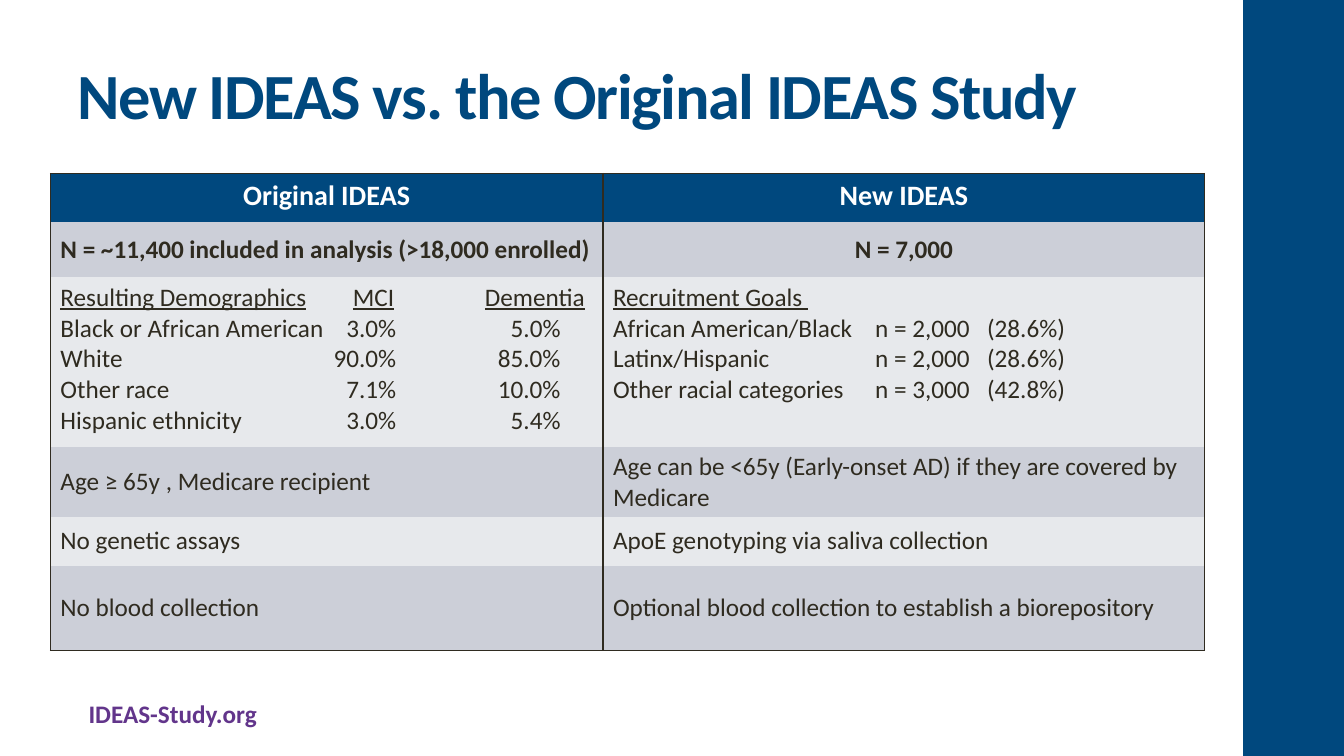
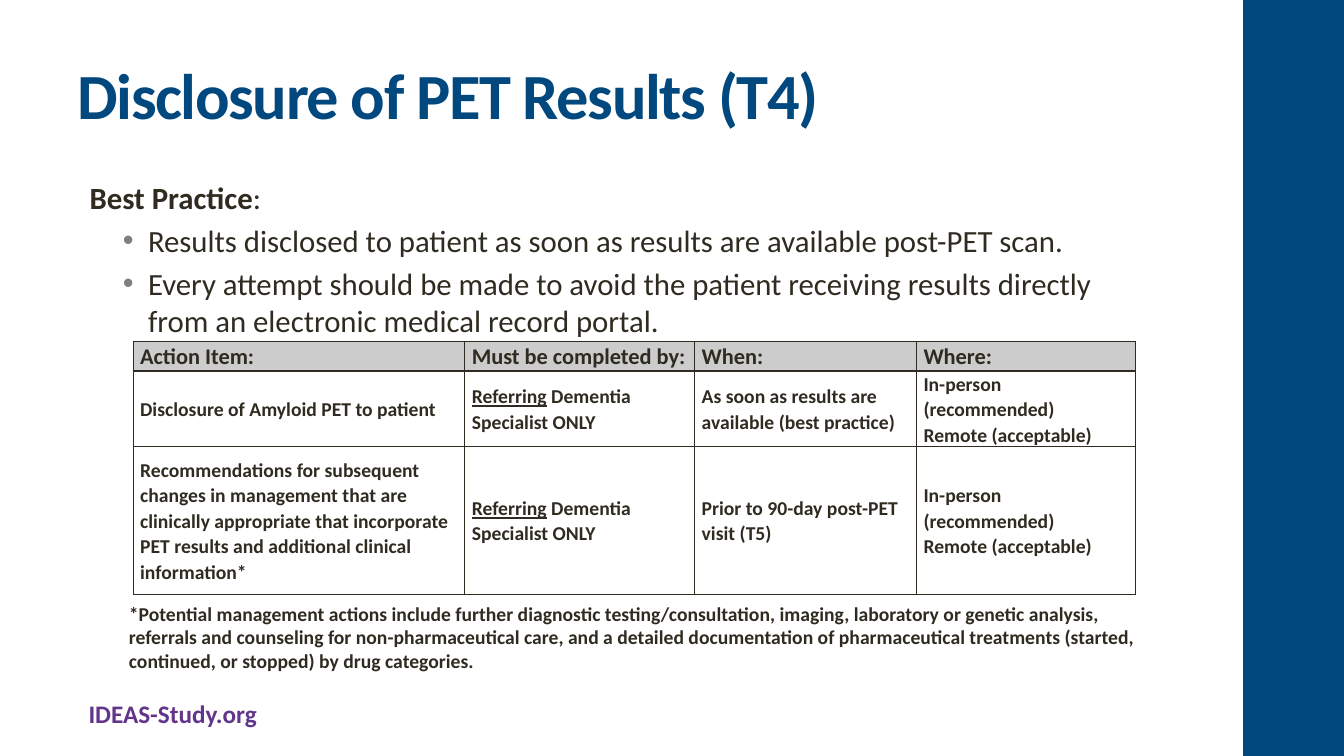
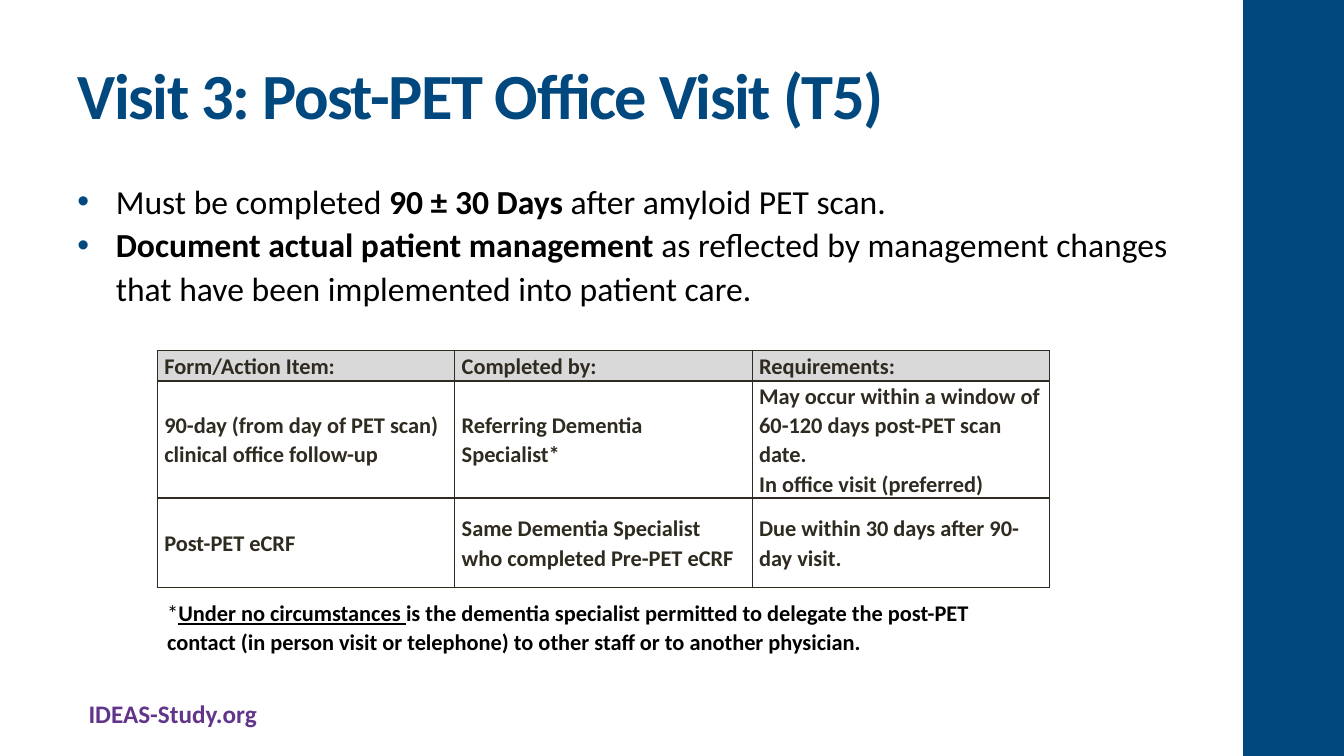
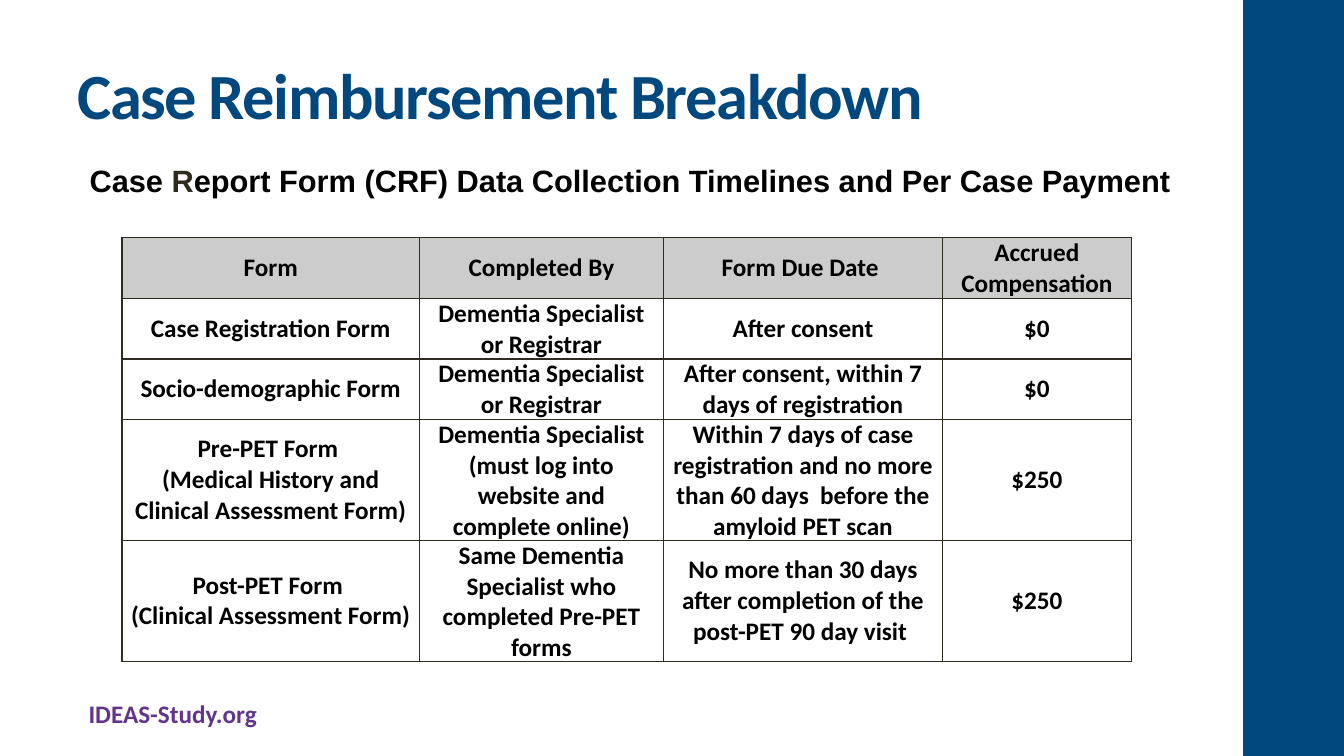
from lxml.etree import SubElement
from pptx import Presentation
from pptx.dml.color import RGBColor
from pptx.enum.shapes import MSO_SHAPE as Shape
from pptx.enum.text import MSO_ANCHOR as Anchor, PP_ALIGN as Align
from pptx.oxml.ns import qn
from pptx.util import Pt

PX = 9144
NAVY = RGBColor(0x00, 0x48, 0x7E)
PURPLE = RGBColor(0x62, 0x35, 0x8B)
DARK = RGBColor(0x2F, 0x2B, 0x20)
BLACK = RGBColor(0, 0, 0)
WHITE = RGBColor(255, 255, 255)
MID_GRAY = RGBColor(0x7F, 0x7F, 0x7F)
HEAD_GRAY = RGBColor(0xCC, 0xCC, 0xCC)
PALE_GRAY = RGBColor(0xD9, 0xD9, 0xD9)
BAND_DARK = RGBColor(0xCC, 0xCF, 0xD8)
BAND_LIGHT = RGBColor(0xE7, 0xE9, 0xEC)

FOOTER = "IDEAS-Study.org"
HEADER_TABS = [(290, "l"), (421, "l")]
RATE_TABS = [(333, "r"), (496, "r")]
GOAL_TABS = [(260, "l"), (371, "l")]
SUB_BULLET = {"margin": 70, "indent": -25, "bullet": MID_GRAY, "before": 4.4}
BULLET = {"margin": 38, "indent": -38, "bullet": NAVY}

REFERRING = [[("Referring", "u"), (" Dementia Specialist ONLY", "")]]
WHERE = ["In-person (recommended)", "Remote (acceptable)"]

STUDY_ROWS = [
    ["Original IDEAS", "New IDEAS"],
    ["N = ~11,400 included in analysis (>18,000 enrolled)",
     [{"runs": "N = 7,000", "align": Align.CENTER}]],
    [[{"runs": [("Resulting Demographics\tMCI\tDementia", "u")], "tabs": HEADER_TABS},
      {"runs": "Black or African American\t3.0%\t5.0%", "tabs": RATE_TABS},
      {"runs": "White\t90.0%\t85.0%", "tabs": RATE_TABS},
      {"runs": "Other race\t7.1%\t10.0%", "tabs": RATE_TABS},
      {"runs": "Hispanic ethnicity\t3.0%\t5.4%", "tabs": RATE_TABS}],
     [[("Recruitment Goals ", "u")],
      {"runs": "African American/Black\tn = 2,000\t(28.6%)", "tabs": GOAL_TABS},
      {"runs": "Latinx/Hispanic\tn = 2,000\t(28.6%)", "tabs": GOAL_TABS},
      {"runs": "Other racial categories\tn = 3,000\t(42.8%)", "tabs": GOAL_TABS}]],
    ["Age ≥ 65y , Medicare recipient",
     "Age can be <65y (Early-onset AD) if they are covered by Medicare"],
    ["No genetic assays", "ApoE genotyping via saliva collection"],
    ["No blood collection", "Optional blood collection to establish a biorepository"],
]
STUDY_FORMATS = [
    {"fill": NAVY, "size": 20, "bold": True, "color": WHITE,
     "align": Align.CENTER, "anchor": Anchor.TOP},
    {"fill": BAND_DARK, "bold": True},
    {"fill": BAND_LIGHT, "anchor": Anchor.TOP},
    {"fill": BAND_DARK},
    {"fill": BAND_LIGHT},
    {"fill": BAND_DARK},
]

DISCLOSURE_BODY = [
    {"runs": [("Best Practice", "b"), (":", "")], "margin": 12},
    {"runs": "Results disclosed to patient as soon as results are available post-PET scan.",
     **SUB_BULLET},
    {"runs": "Every attempt should be made to avoid the patient receiving results directly "
             "from an electronic medical record portal.", **SUB_BULLET},
]
DISCLOSURE_ROWS = [
    ["Action Item:", "Must be completed by:", "When:", "Where:"],
    ["Disclosure of Amyloid PET to patient", REFERRING,
     "As soon as results are available (best practice)", WHERE],
    ["Recommendations for subsequent changes in management that are clinically appropriate "
     "that incorporate PET results and additional clinical information*", REFERRING,
     "Prior to 90-day post-PET visit (T5)", WHERE],
]
DISCLOSURE_NOTE = (
    "*Potential management actions include further diagnostic testing/consultation, imaging, "
    "laboratory or genetic analysis, referrals and counseling for non-pharmaceutical care, and "
    "a detailed documentation of pharmaceutical treatments (started, continued, or stopped) "
    "by drug categories.")

VISIT_BODY = [
    {"runs": [("Must be completed ", ""), ("90 ± 30 Days", "b"),
              (" after amyloid PET scan.", "")], **BULLET},
    {"runs": [("Document actual patient management ", "b"),
              ("as reflected by management changes that have been implemented into "
               "patient care.", "")], **BULLET},
]
VISIT_ROWS = [
    ["Form/Action Item:", "Completed by:", "Requirements:"],
    ["90-day (from day of PET scan) clinical office follow-up",
     "Referring Dementia Specialist*",
     ["May occur within a window of 60-120 days post-PET scan date.",
      "In office visit (preferred)"]],
    ["Post-PET eCRF", "Same Dementia Specialist who completed Pre-PET eCRF",
     "Due within 30 days after 90-day visit."],
]
VISIT_NOTE = [[
    ("*", ""), ("Under no circumstances ", "bu"),
    ("is the dementia specialist permitted to delegate the post-PET contact (in person visit "
     "or telephone) to other staff or to another physician.", "b")]]

PAYMENT_HEADING = [[
    ("Case ", ""), ("R", "d"),
    ("eport Form (CRF) Data Collection Timelines and Per Case Payment", "")]]
PAYMENT_ROWS = [
    ["Form", "Completed By", "Form Due Date ", "Accrued Compensation"],
    ["Case Registration Form", "Dementia Specialist or Registrar", "After consent", "$0"],
    ["Socio-demographic Form", "Dementia Specialist or Registrar",
     "After consent, within 7 days of registration", "$0"],
    [["Pre-PET Form ", "(Medical History and Clinical Assessment Form)"],
     "Dementia Specialist (must log into website and complete online)",
     "Within 7 days of case registration and no more than 60 days  before the amyloid PET scan",
     "$250"],
    [["Post-PET Form ", "(Clinical Assessment Form)"],
     "Same Dementia Specialist who completed Pre-PET forms",
     "No more than 30 days after completion of the post-PET 90 day visit ", "$250"],
]


def px(*lengths):
    return [length * PX for length in lengths]


def add_color(parent, color):
    SubElement(parent, qn("a:srgbClr"), val=str(color))


def write(frame, content, size=18, color=DARK, bold=False, font="Calibri",
          align=Align.LEFT, line=None, spacing=None):
    items = [content] if isinstance(content, str) else content
    for index, item in enumerate(items):
        detail = item if isinstance(item, dict) else {"runs": item}
        paragraph = frame.paragraphs[0] if index == 0 else frame.add_paragraph()
        properties = paragraph._p.get_or_add_pPr()
        if "margin" in detail:
            properties.set("marL", str(detail["margin"] * PX))
            properties.set("indent", str(detail.get("indent", 0) * PX))
        if "bullet" in detail:
            add_color(SubElement(properties, qn("a:buClr")), detail["bullet"])
            SubElement(properties, qn("a:buFont"), typeface="Arial")
            SubElement(properties, qn("a:buChar"), char="•")
        if "tabs" in detail:
            stops = SubElement(properties, qn("a:tabLst"))
            for position, side in detail["tabs"]:
                SubElement(stops, qn("a:tab"), pos=str(position * PX), algn=side)
        paragraph.alignment = detail.get("align", align)
        if line:
            paragraph.line_spacing = line
        if "before" in detail:
            paragraph.space_before = Pt(detail["before"])
        paragraph.font.size = Pt(size)
        paragraph.font.name = font
        paragraph.font.bold = bold
        paragraph.font.color.rgb = color
        runs = detail["runs"]
        for text, flags in [(runs, "")] if isinstance(runs, str) else runs:
            run = paragraph.add_run()
            run.text = text
            if "b" in flags:
                run.font.bold = True
            if "u" in flags:
                run.font.underline = True
            if "d" in flags:
                run.font.color.rgb = DARK
            if spacing:
                run._r.get_or_add_rPr().set("spc", str(spacing))


def add_text(slide, box, content, anchor=Anchor.TOP, **style):
    frame = slide.shapes.add_textbox(*px(*box)).text_frame
    frame.word_wrap = True
    frame.vertical_anchor = anchor
    write(frame, content, **style)


def add_borders(cell, sides):
    properties = cell._tc.get_or_add_tcPr()
    for side in "LRTB":
        border = SubElement(properties, qn("a:ln" + side), w=str(Pt(1)))
        if side in sides:
            add_color(SubElement(border, qn("a:solidFill")), DARK)
        else:
            SubElement(border, qn("a:noFill"))


def add_table(slide, left, top, widths, heights, rows, formats, grid=True, **style):
    box = px(left, top, sum(widths), sum(heights))
    table = slide.shapes.add_table(len(rows), len(widths), *box).table
    table.first_row = table.horz_banding = False
    for column, width in zip(table.columns, widths):
        column.width = width * PX
    last = len(rows) - 1
    for index, (cells, row_format) in enumerate(zip(rows, formats)):
        table.rows[index].height = heights[index] * PX
        row_style = {**style, **row_format}
        fill = row_style.pop("fill", WHITE)
        anchor = row_style.pop("anchor", Anchor.MIDDLE)
        sides = "LR" + "T" * (grid or index == 0) + "B" * (grid or index == last)
        for column, content in enumerate(cells):
            cell = table.cell(index, column)
            add_borders(cell, sides)
            cell.fill.solid()
            cell.fill.fore_color.rgb = fill
            cell.vertical_anchor = anchor
            if grid:
                cell.margin_left = cell.margin_right = 7 * PX
                cell.margin_top = cell.margin_bottom = 0
            write(cell.text_frame, content, **row_style)


def add_slide(presentation, title):
    slide = presentation.slides.add_slide(presentation.slide_layouts[6])
    band = slide.shapes.add_shape(Shape.RECTANGLE, *px(1233, 0, 100, 750))
    band.shadow.inherit = False
    band.fill.solid()
    band.fill.fore_color.rgb = NAVY
    band.line.fill.background()
    add_text(slide, (78, 688, 230, 40), FOOTER, color=PURPLE, bold=True)
    add_text(slide, (67, 30, 1111, 125), title, anchor=Anchor.MIDDLE,
             size=46, color=NAVY, bold=True, spacing=-100)
    return slide


def main():
    presentation = Presentation()
    presentation.slide_width, presentation.slide_height = px(1333, 750)

    slide = add_slide(presentation, "New IDEAS vs. the Original IDEAS Study")
    add_table(slide, 50, 172, [548, 597], [48, 55, 168, 70, 48, 84],
              STUDY_ROWS, STUDY_FORMATS, grid=False)

    slide = add_slide(presentation, "Disclosure of PET Results (T4)")
    add_text(slide, (67, 172, 1087, 483), DISCLOSURE_BODY, size=22)
    add_table(slide, 132, 339, [329, 228, 220, 217], [29, 75, 147], DISCLOSURE_ROWS,
              [{"fill": HEAD_GRAY, "size": 16}, {}, {}], size=14, bold=True, line=1.07)
    add_text(slide, (118, 592, 1023, 80), DISCLOSURE_NOTE, size=14, bold=True)

    slide = add_slide(presentation, "Visit 3: Post-PET Office Visit (T5)")
    add_text(slide, (67, 172, 1111, 483), VISIT_BODY, size=24, color=BLACK, line=1.07)
    add_table(slide, 156, 348, [295] * 3, [30, 116, 89], VISIT_ROWS,
              [{"fill": PALE_GRAY}, {}, {}], size=16, bold=True, line=1.07)
    add_text(slide, (156, 588, 829, 66), VISIT_NOTE, size=16, color=BLACK, line=1.07)

    slide = add_slide(presentation, "Case Reimbursement Breakdown")
    add_text(slide, (79, 155, 1128, 47), PAYMENT_HEADING, anchor=Anchor.MIDDLE,
             size=22, color=BLACK, bold=True, font="Arial")
    add_table(slide, 121, 236, [295, 242, 277, 187], [60, 60, 60, 120, 120], PAYMENT_ROWS,
              [{"fill": HEAD_GRAY}] + [{}] * 4, color=BLACK, bold=True, align=Align.CENTER)

    presentation.save("out.pptx")


if __name__ == "__main__":
    main()
